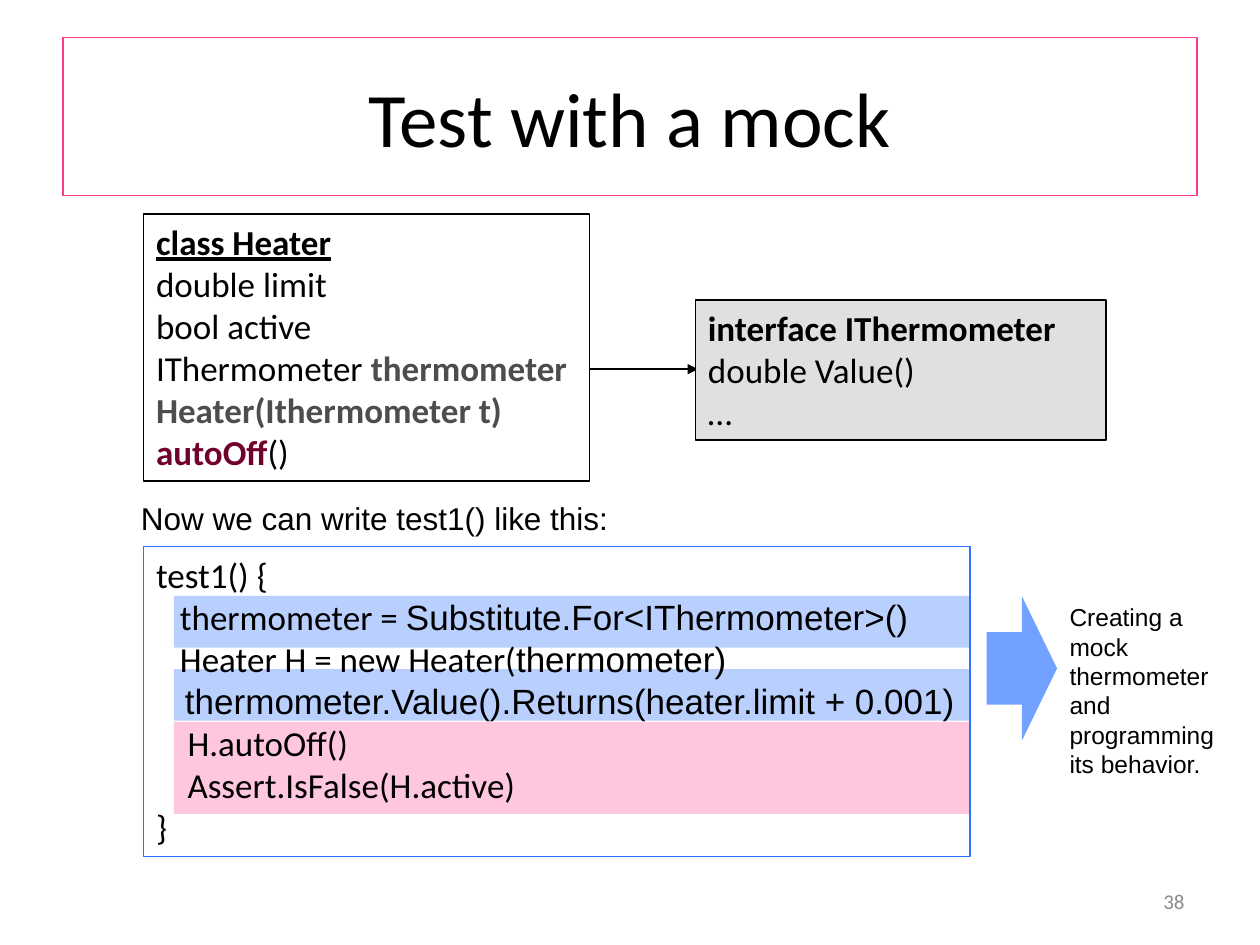
"""Build the slide on testing a heater with a mock thermometer."""
from dataclasses import dataclass

import lxml.etree
import pptx
import pptx.dml.color
import pptx.enum.shapes
import pptx.enum.text
import pptx.oxml.ns
import pptx.util

Inches = pptx.util.Inches
Pt = pptx.util.Pt
Shape = pptx.enum.shapes.MSO_SHAPE
Align = pptx.enum.text.PP_ALIGN
Anchor = pptx.enum.text.MSO_ANCHOR

COLORS = {
    "black": "000000",
    "title border": "FF388C",
    "test border": "2C71FF",
    "setup band": "B9D0FF",
    "check band": "FFC7DD",
    "interface": "E0E0E0",
    "arrow": "72A1FF",
    "dependency": "4D4D4D",
    "method": "72002C",
    "page number": "8C8C8C",
}


@dataclass(frozen=True)
class Style:
    font: str = "Calibri"
    size: int = 20
    color: str = "black"
    bold: bool = False
    underline: bool = False


@dataclass(frozen=True)
class Line:
    segments: tuple[tuple[str, Style], ...]
    indent: float = 0


@dataclass(frozen=True)
class Box:
    left: float
    top: float
    width: float
    height: float
    fill: str | None = None
    border: str | None = None
    border_width: float = 1
    geometry: Shape = Shape.RECTANGLE


CODE = Style()
BOLD = Style(bold=True)
ARIAL_CODE = Style(font="Arial")
DEPENDENCY = Style(color="dependency", bold=True)


def rgb(name: str) -> pptx.dml.color.RGBColor:
    """Return the named colour."""
    return pptx.dml.color.RGBColor.from_string(COLORS[name])


def set_font(font, style: Style) -> None:
    """Apply a text style to a font."""
    font.name = style.font
    font.size = Pt(style.size)
    font.color.rgb = rgb(style.color)
    font.bold = style.bold
    font.underline = style.underline


def line(text: str, style: Style = CODE, indent: float = 0) -> Line:
    """Make a line with one style."""
    return Line(((text, style),), indent)


def draw_box(slide, box: Box):
    """Draw a shape with an optional fill and border."""
    shape = slide.shapes.add_shape(
        box.geometry, Inches(box.left), Inches(box.top), Inches(box.width), Inches(box.height)
    )
    shape.shadow.inherit = False
    if box.fill:
        shape.fill.solid()
        shape.fill.fore_color.rgb = rgb(box.fill)
    else:
        shape.fill.background()
    if box.border:
        shape.line.color.rgb = rgb(box.border)
        shape.line.width = Pt(box.border_width)
    else:
        shape.line.fill.background()
    return shape


def write(shape, lines: list[Line], align=Align.LEFT, anchor=Anchor.TOP, wrap: bool = True) -> None:
    """Write styled lines into a shape."""
    frame = shape.text_frame
    frame.word_wrap = wrap
    frame.vertical_anchor = anchor
    for index, content in enumerate(lines):
        paragraph = frame.paragraphs[0] if index == 0 else frame.add_paragraph()
        paragraph.alignment = align
        if content.indent:
            paragraph._p.get_or_add_pPr().set("marL", str(Inches(content.indent)))
        styles = {style for _, style in content.segments}
        if len(styles) == 1:
            set_font(paragraph.font, content.segments[0][1])
        for text, style in content.segments:
            run = paragraph.add_run()
            run.text = text
            if len(styles) > 1:
                set_font(run.font, style)


def draw_label(slide, box: Box, content: Line, align=Align.LEFT, anchor=Anchor.TOP) -> None:
    """Draw a text box holding one paragraph."""
    label = slide.shapes.add_textbox(
        Inches(box.left), Inches(box.top), Inches(box.width), Inches(box.height)
    )
    write(label, [content], align, anchor)


def draw_dependency(slide, start: float, end: float, height: float) -> None:
    """Draw a horizontal arrow between the two types."""
    connector = slide.shapes.add_connector(
        pptx.enum.shapes.MSO_CONNECTOR.STRAIGHT,
        Inches(start), Inches(height), Inches(end), Inches(height),
    )
    connector.line.color.rgb = rgb("black")
    connector.line.width = Pt(1.5)
    qn = pptx.oxml.ns.qn
    lxml.etree.SubElement(connector.line._get_or_add_ln(), qn("a:tailEnd"), type="triangle")
    lxml.etree.SubElement(connector._element.spPr, qn("a:effectLst"))


def main() -> None:
    """Build and save the slide."""
    presentation = pptx.Presentation()
    presentation.slide_width = Inches(10)
    presentation.slide_height = Inches(7.5)
    slide = presentation.slides.add_slide(presentation.slide_layouts[6])

    for top, height, fill in (
        (4.73, 0.41, "setup band"), (5.31, 0.41, "setup band"), (5.73, 0.73, "check band"),
    ):
        draw_box(slide, Box(1.38, top, 6.32, height, fill))

    title = draw_box(slide, Box(0.5, 0.3, 9, 1.25, border="title border", border_width=0.75))
    write(title, [line("Test with a mock", Style(size=44))], Align.CENTER, Anchor.MIDDLE)

    test = draw_box(slide, Box(1.14, 4.34, 6.56, 2.46, border="test border", border_width=0.75))
    write(test, [
        line("test1() {"),
        Line((("thermometer = ", CODE), ("Substitute.For<IThermometer>()", ARIAL_CODE)), 0.19),
        Line((("Heater H = new Heater(", CODE), ("thermometer)", ARIAL_CODE)), 0.19),
        line("thermometer.Value().Returns(heater.limit + 0.001)", ARIAL_CODE, 0.23),
        line("H.autoOff()", indent=0.25),
        line("Assert.IsFalse(H.active)", indent=0.25),
        line("}"),
    ], wrap=False)

    heater = draw_box(slide, Box(1.14, 1.7, 3.54, 2.12, border="black"))
    write(heater, [
        line("class Heater", Style(bold=True, underline=True)),
        line("double limit"),
        line("bool active"),
        Line((("IThermometer ", CODE), ("thermometer", DEPENDENCY))),
        line("Heater(Ithermometer t)", DEPENDENCY),
        Line((("autoOff", Style(color="method", bold=True)), ("()", CODE))),
    ])
    draw_dependency(slide, 4.68, 5.54, 2.93)
    interface = draw_box(slide, Box(5.52, 2.38, 3.26, 1.11, "interface", "black"))
    write(interface, [line("interface IThermometer", BOLD), line("double Value()"), line("…")])

    draw_label(slide, Box(1.02, 3.91, 4.52, 0.4),
               line("Now we can write test1() like this:", Style("Arial", 18)))
    draw_label(slide, Box(8.39, 4.73, 1.5, 1.51),
               line("Creating a mock thermometer and programming its behavior.", Style("Arial", 14)))
    draw_box(slide, Box(7.83, 4.73, 0.56, 1.15, "arrow", geometry=Shape.RIGHT_ARROW))
    draw_label(slide, Box(7.17, 6.95, 2.33, 0.4), line("38", Style(size=12, color="page number")),
               Align.RIGHT, Anchor.MIDDLE)

    presentation.save("out.pptx")


if __name__ == "__main__":
    main()
